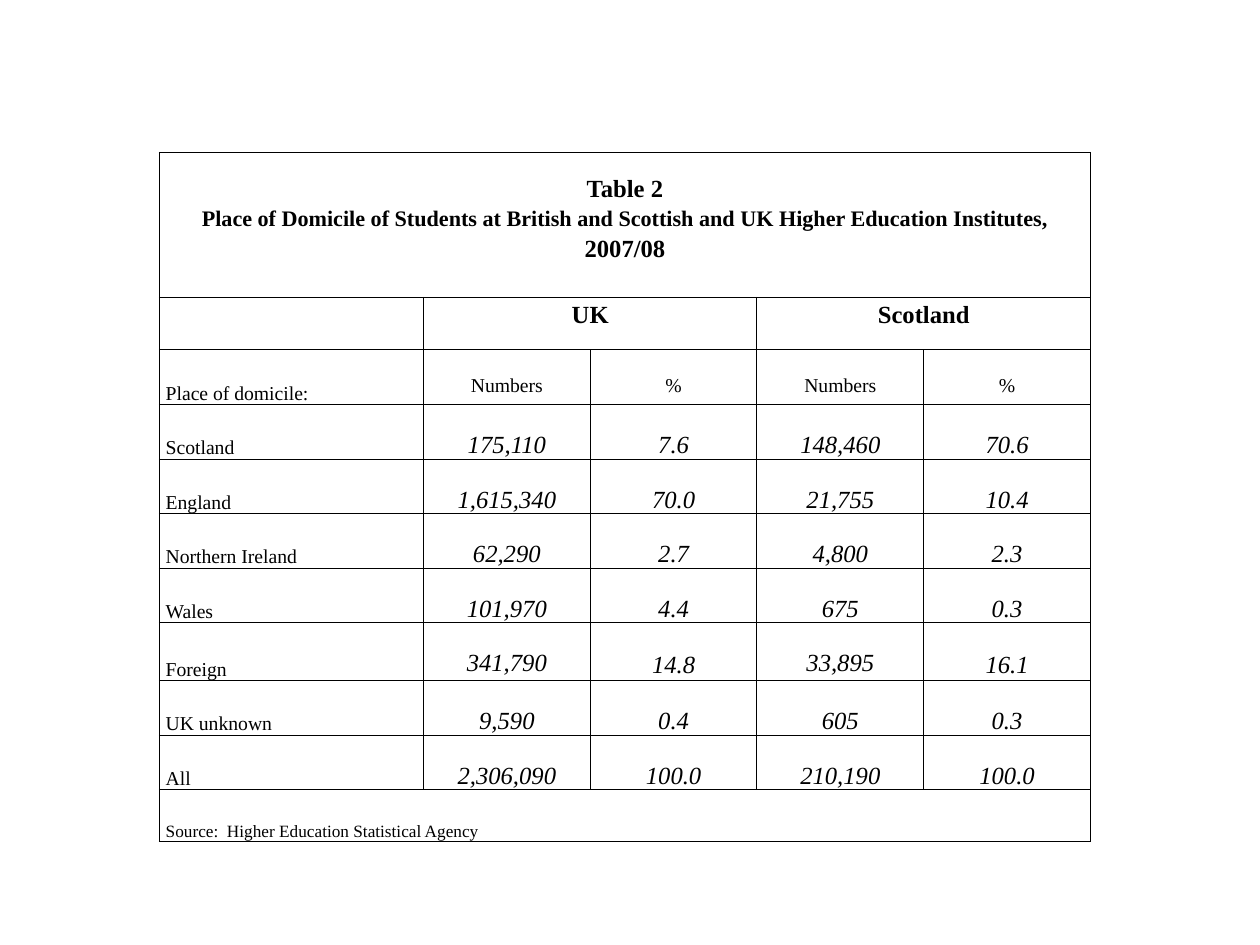
import pptx
import pptx.dml.color
import pptx.enum.text
import pptx.oxml
import pptx.oxml.ns
import pptx.util

Cm = pptx.util.Cm
Pt = pptx.util.Pt
ALIGN = pptx.enum.text.PP_ALIGN
BLACK = "000000"
WHITE = "FFFFFF"

TITLE_LINES = [
    ("Table 2", 20),
    ("Place of Domicile of Students at British and Scottish and UK Higher Education Institutes,", 18),
    ("2007/08", 20),
]
DOMICILES = [
    ("Scotland", "175,110", "7.6", "148,460", "70.6"),
    ("England", "1,615,340", "70.0", "21,755", "10.4"),
    ("Northern Ireland", "62,290", "2.7", "4,800", "2.3"),
    ("Wales", "101,970", "4.4", "675", "0.3"),
    ("Foreign", "341,790", "14.8", "33,895", "16.1"),
    ("UK unknown", "9,590", "0.4", "605", "0.3"),
    ("All", "2,306,090", "100.0", "210,190", "100.0"),
]
COLUMN_WIDTHS = [7.57] + [4.78] * 4
ROW_HEIGHTS = [4.16, 1.49, 1.58] + [1.56] * 4 + [1.67, 1.56, 1.56, 1.49]

LABEL = {"size": Pt(16), "bold": False, "italic": False}
FIGURE = {"size": Pt(20), "bold": False, "italic": True}
HEADING = {"size": Pt(20), "bold": True, "italic": False}
SOURCE = {"size": Pt(14), "bold": False, "italic": False}


def rgb(value):
    return pptx.dml.color.RGBColor.from_string(value)


def set_borders(cell, color=BLACK, width=Pt(1)):
    tcPr = cell._tc.get_or_add_tcPr()
    for side in ("lnL", "lnR", "lnT", "lnB"):
        tcPr.append(pptx.oxml.parse_xml(
            f'<a:{side} {pptx.oxml.ns.nsdecls("a")} w="{width}">'
            f'<a:solidFill><a:srgbClr val="{color}"/></a:solidFill></a:{side}>'
        ))


def format_cell(cell):
    set_borders(cell)
    cell.fill.solid()
    cell.fill.fore_color.rgb = rgb(WHITE)
    layout = {
        "margin_left": Cm(0.18), "margin_right": Cm(0.18),
        "margin_top": 0, "margin_bottom": 0,
        "vertical_anchor": pptx.enum.text.MSO_ANCHOR.BOTTOM,
    }
    for name, value in layout.items():
        setattr(cell, name, value)


def write_paragraph(p, text, style, align=ALIGN.CENTER, spacing=1.15):
    p.alignment = align
    p.line_spacing = spacing
    r = p.add_run()
    r.text = text
    for name, value in {"name": "Times New Roman", **style}.items():
        setattr(r.font, name, value)
    r.font.color.rgb = rgb(BLACK)


def write_cell(cell, text, style, bottom=0, **options):
    cell.margin_bottom = Cm(bottom)
    write_paragraph(cell.text_frame.paragraphs[0], text, style, **options)


def write_headings(table):
    title = table.cell(0, 0)
    title.merge(table.cell(0, 4))
    title.margin_bottom = Cm(1)
    tf = title.text_frame
    for i, (text, size) in enumerate(TITLE_LINES):
        p = tf.add_paragraph() if i else tf.paragraphs[0]
        write_paragraph(p, text, {**HEADING, "size": Pt(size)})

    write_cell(table.cell(2, 0), "Place of domicile:", LABEL, align=ALIGN.LEFT)
    for col, region in ((1, "UK"), (3, "Scotland")):
        table.cell(1, col).merge(table.cell(1, col + 1))
        write_cell(table.cell(1, col), region, HEADING, bottom=0.6)
        for offset, measure in enumerate(("Numbers", "%")):
            write_cell(table.cell(2, col + offset), measure, LABEL, bottom=0.23)


def write_figures(table):
    for row, (domicile, *figures) in enumerate(DOMICILES, start=3):
        write_cell(table.cell(row, 0), domicile, LABEL, align=ALIGN.LEFT)
        for col, figure in enumerate(figures, start=1):
            bottom = (0.1 if col % 2 else 0.05) if domicile == "Foreign" else 0
            write_cell(table.cell(row, col), figure, FIGURE, bottom=bottom, spacing=1.0)


def write_source(table):
    last = len(ROW_HEIGHTS) - 1
    cell = table.cell(last, 0)
    cell.merge(table.cell(last, 4))
    write_cell(cell, "Source:  Higher Education Statistical Agency", SOURCE, align=ALIGN.LEFT)


def add_domicile_table(s, left, top):
    frame = s.shapes.add_table(
        len(ROW_HEIGHTS), len(COLUMN_WIDTHS), Cm(left), Cm(top),
        Cm(sum(COLUMN_WIDTHS)), Cm(sum(ROW_HEIGHTS)),
    )
    table = frame.table
    table.first_row = False
    table.horz_banding = False
    for column, width in zip(table.columns, COLUMN_WIDTHS):
        column.width = Cm(width)
    for row, height in zip(table.rows, ROW_HEIGHTS):
        row.height = Cm(height)
    for cell in table.iter_cells():
        format_cell(cell)
    write_headings(table)
    write_figures(table)
    write_source(table)


def main():
    prs = pptx.Presentation()
    prs.slide_width = Cm(36.12)
    prs.slide_height = Cm(27.1)
    s = prs.slides.add_slide(prs.slide_layouts[6])
    add_domicile_table(s, 4.57, 4.37)
    prs.save("out.pptx")


if __name__ == "__main__":
    main()
